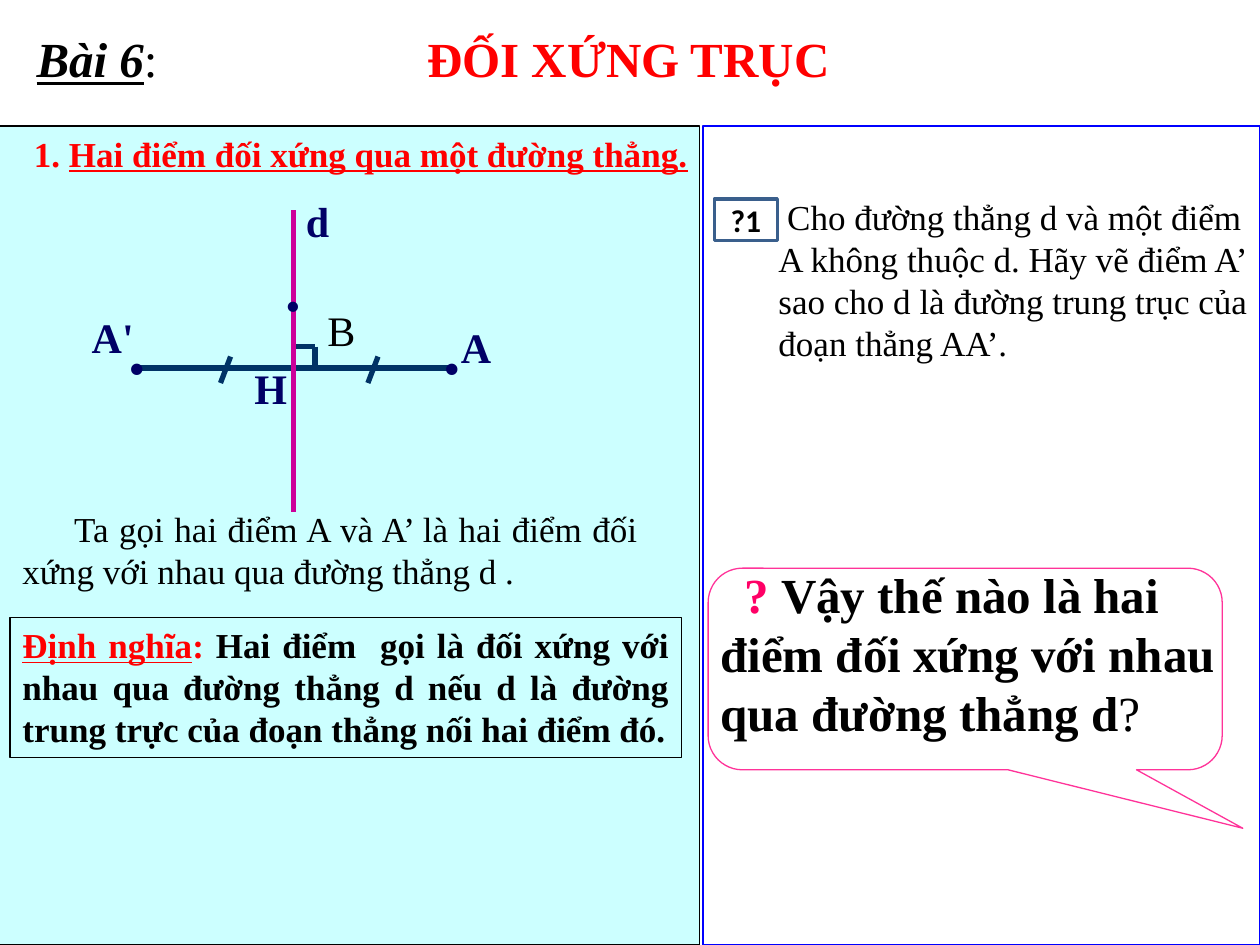
import pptx
import pptx.util
import pptx.dml.color
import pptx.enum.shapes
import pptx.enum.text
import pptx.oxml.ns
import lxml.etree

Inches, Pt = pptx.util.Inches, pptx.util.Pt
SHAPE = pptx.enum.shapes.MSO_SHAPE
ALIGN = pptx.enum.text.PP_ALIGN
ANCHOR = pptx.enum.text.MSO_ANCHOR

HUES = {
    "black": "000000", "white": "FFFFFF", "red": "FF0000", "blue": "0000FF",
    "cyan": "CCFFFF", "pink": "FF3399", "rose": "FF0066", "navy": "000066",
    "teal": "003366", "plum": "CC0099", "steel": "3A5F8C",
}

# Content: runs are (text, colour, style), style letters b, i, u
TITLE = [("Bài 6", "black", "biu"), (":\t", "black", ""),
         ("ĐỐI XỨNG TRỤC", "red", "b")]
HEAD = [("1. ", "red", "b"),
        ("Hai điểm đối xứng qua một đường thẳng.", "red", "bu")]
CALL = [("Ta gọi hai điểm A và A’ là hai điểm đối xứng với nhau "
         "qua đường thẳng d .", "black", "")]
RULE = [("Định nghĩa", "red", "bu"), (": ", "red", "b"),
        ("Hai điểm  gọi là đối xứng với nhau qua đường thẳng d nếu d là "
         "đường trung trực của đoạn thẳng nối hai điểm đó.", "black", "b")]
TASK = [(" Cho đường thẳng d và một điểm A không thuộc d. Hãy vẽ điểm A’ "
         "sao cho d là đường trung trục của đoạn thẳng AA’.", "black", "")]
ASK = [("? ", "rose", "b"),
       ("Vậy thế nào là hai điểm đối xứng với nhau qua đường thẳng d",
        "black", "b"), ("?", "black", "")]

# Figure: axis x, base y, half length of segment AA', side of the right angle
MID, BASE, HALF, SIDE = 2.33, 2.92, 1.25, 0.17
LINES = [
    ((MID + HALF, BASE), (MID, BASE), "teal"),
    ((MID, BASE), (MID - HALF, BASE), "teal"),
    ((MID, BASE - SIDE), (MID + SIDE, BASE - SIDE), "teal"),
    ((MID + SIDE, BASE - SIDE), (MID + SIDE, BASE), "teal"),
    ((3, 2.83), (2.92, 3.04), "teal"),
    ((1.83, 2.83), (1.75, 3.04), "teal"),
    ((MID, 1.67), (MID, 4.06), "plum"),
]
# Labels and dots: text, box, size, colour, style, wrap
MARKS = [
    ("d", (2.33, 1.5, 0.33, 0.5), 24, "navy", "b", True),
    ("H", (1.92, 2.83, 0.5, 0.5), 24, "navy", "b", True),
    ("A", (3.56, 2.5, 0.44, 0.5), 24, "navy", "b", False),
    ("A'", (0.63, 2.42, 0.53, 0.5), 24, "navy", "b", False),
    ("B", (2.5, 2.37, 0.43, 0.5), 24, "black", "", False),
    (".", (3.42, 2.37, 0.42, 0.77), 40, "navy", "b", True),
    (".", (0.92, 2.37, 0.42, 0.77), 40, "navy", "b", True),
    (".", (2.17, 1.92, 0.33, 0.71), 36, "navy", "b", True),
]


def hue(name):
    return pptx.dml.color.RGBColor.from_string(HUES[name])


def place(box):
    return [Inches(n) for n in box]


def write(shape, runs, size, align=ALIGN.LEFT, indent=0, wrap=True,
          font="Times New Roman", anchor=ANCHOR.TOP):
    frame = shape.text_frame
    frame.word_wrap = wrap
    frame.vertical_anchor = anchor
    para = frame.paragraphs[0]
    para.alignment = align
    if indent:
        para._p.get_or_add_pPr().set("indent", str(Inches(indent)))
    for text, color, style in runs:
        run = para.add_run()
        run.text = text
        run.font.name = font
        run.font.size = Pt(size)
        run.font.color.rgb = hue(color)
        run.font.bold = "b" in style
        run.font.italic = "i" in style
        run.font.underline = "u" in style
    return para


def label(slide, box, runs, size, **more):
    return write(slide.shapes.add_textbox(*place(box)), runs, size, **more)


def panel(slide, kind, box, fill, line, width=0.75):
    shape = slide.shapes.add_shape(kind, *place(box))
    shape.shadow.inherit = False
    if fill:
        shape.fill.solid()
        shape.fill.fore_color.rgb = hue(fill)
    else:
        shape.fill.background()
    shape.line.color.rgb = hue(line)
    shape.line.width = Pt(width)
    return shape


def stroke(slide, start, end, color):
    line = slide.shapes.add_connector(
        pptx.enum.shapes.MSO_CONNECTOR.STRAIGHT, *place(start + end))
    line.line.color.rgb = hue(color)
    line.line.width = Pt(3)
    lxml.etree.SubElement(line._element.spPr, pptx.oxml.ns.qn("a:effectLst"))


def main():
    deck = pptx.Presentation()
    deck.slide_width, deck.slide_height = Inches(10), Inches(7.5)
    slide = deck.slides.add_slide(deck.slide_layouts[5])

    # Title, with a tab stop before the lesson name
    title = slide.shapes.title
    title.left, title.top, title.width, title.height = place(
        (0.19, 0.18, 9.81, 0.57))
    props = write(title, TITLE, 28)._p.get_or_add_pPr()
    tabs = lxml.etree.SubElement(props, pptx.oxml.ns.qn("a:tabLst"))
    lxml.etree.SubElement(tabs, pptx.oxml.ns.qn("a:tab"),
                          pos=str(Inches(3.1)), algn="l")

    # Two panels
    panel(slide, SHAPE.RECTANGLE, (-0.03, 1, 5.58, 6.5), "cyan", "black")
    panel(slide, SHAPE.RECTANGLE, (5.58, 1, 4.42, 6.5), "white", "blue")

    # Left: heading, statement, definition
    label(slide, (0.17, 1, 5.58, 0.43), HEAD, 20)
    label(slide, (0.08, 3.98, 5.08, 0.77), CALL, 20,
          align=ALIGN.JUSTIFY, indent=0.41)
    rule = panel(slide, SHAPE.RECTANGLE, (0.08, 4.9, 5.33, 1.11),
                 None, "black")
    write(rule, RULE, 20, align=ALIGN.JUSTIFY)

    # Left: figure
    for start, end, color in LINES:
        stroke(slide, start, end, color)
    for text, box, size, color, style, wrap in MARKS:
        label(slide, box, [(text, color, style)], size, wrap=wrap)

    # Right: task
    badge = panel(slide, SHAPE.RECTANGLE, (5.67, 1.58, 0.5, 0.33),
                  None, "steel", 2)
    write(badge, [("?1", "black", "b")], 18, align=ALIGN.CENTER,
          font="Calibri", anchor=ANCHOR.MIDDLE)
    label(slide, (6.08, 1.5, 3.92, 1.45), TASK, 20)

    # Right: question in a callout
    bubble = panel(slide, SHAPE.ROUNDED_RECTANGULAR_CALLOUT,
                   (5.62, 4.51, 4.08, 1.6), "white", "pink")
    for spot, value in enumerate((0.54, 0.79, 0.17)):
        bubble.adjustments[spot] = value
    label(slide, (5.62, 4.43, 4.17, 1.52), ASK, 28, indent=0.19)

    deck.save("out.pptx")


if __name__ == "__main__":
    main()
